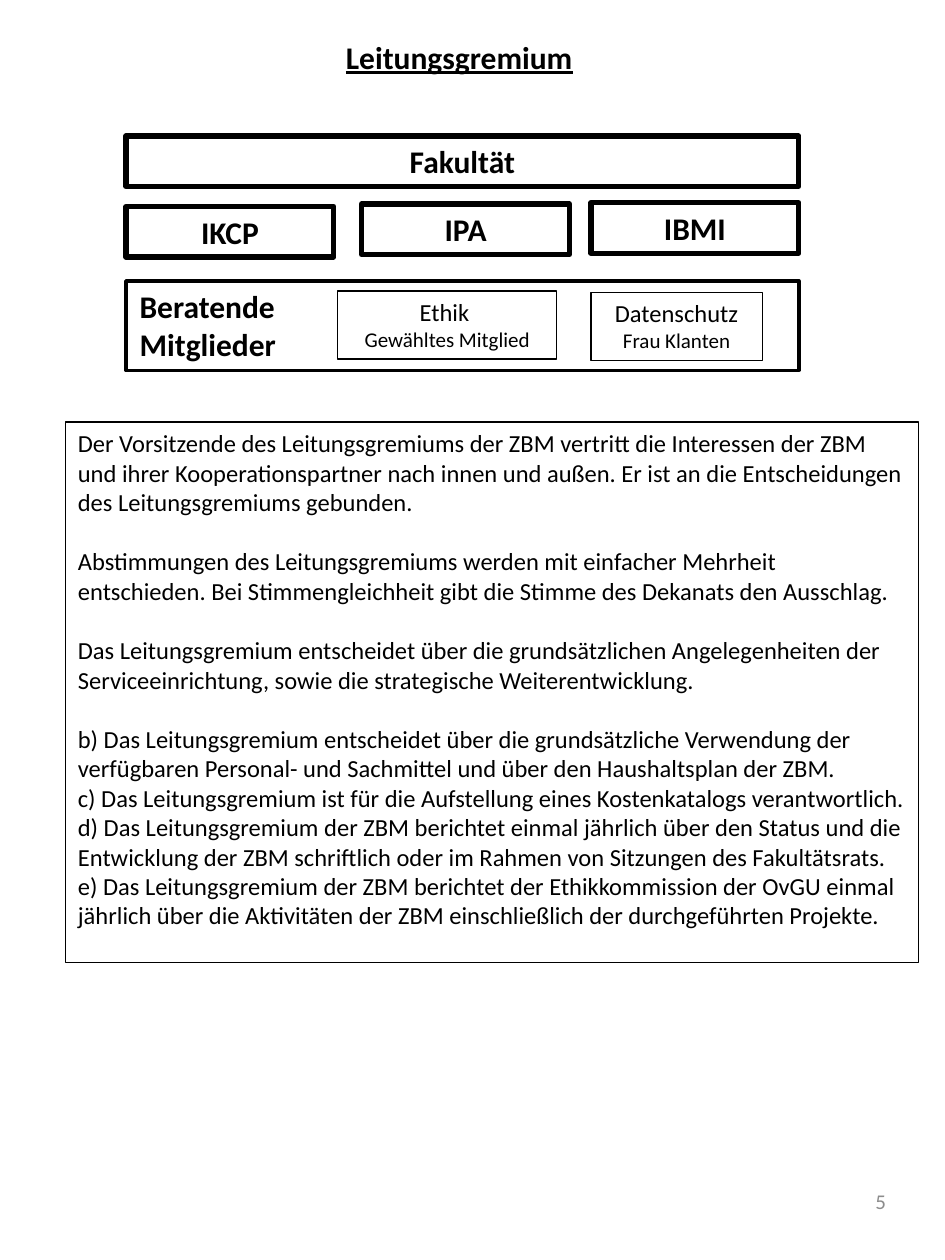
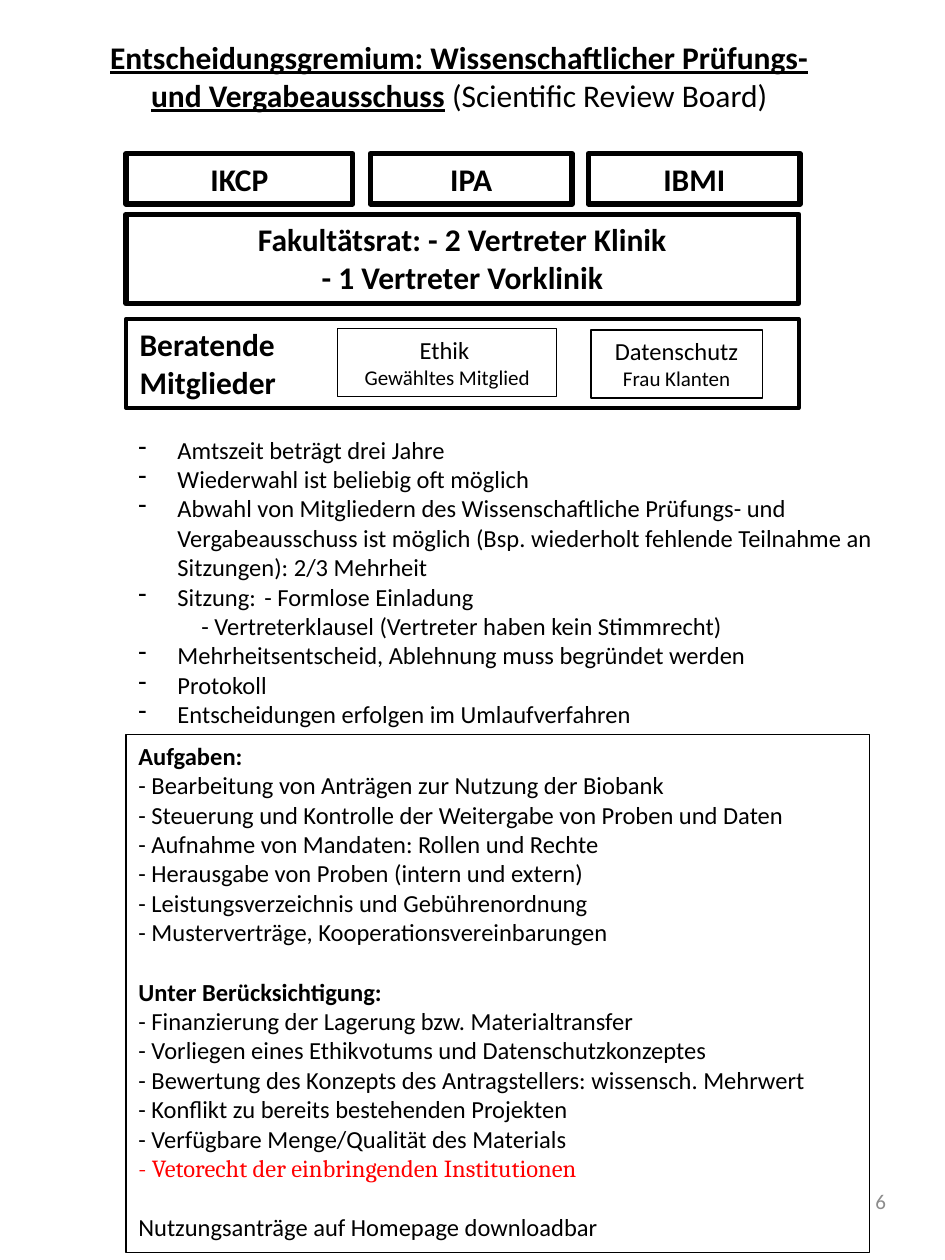
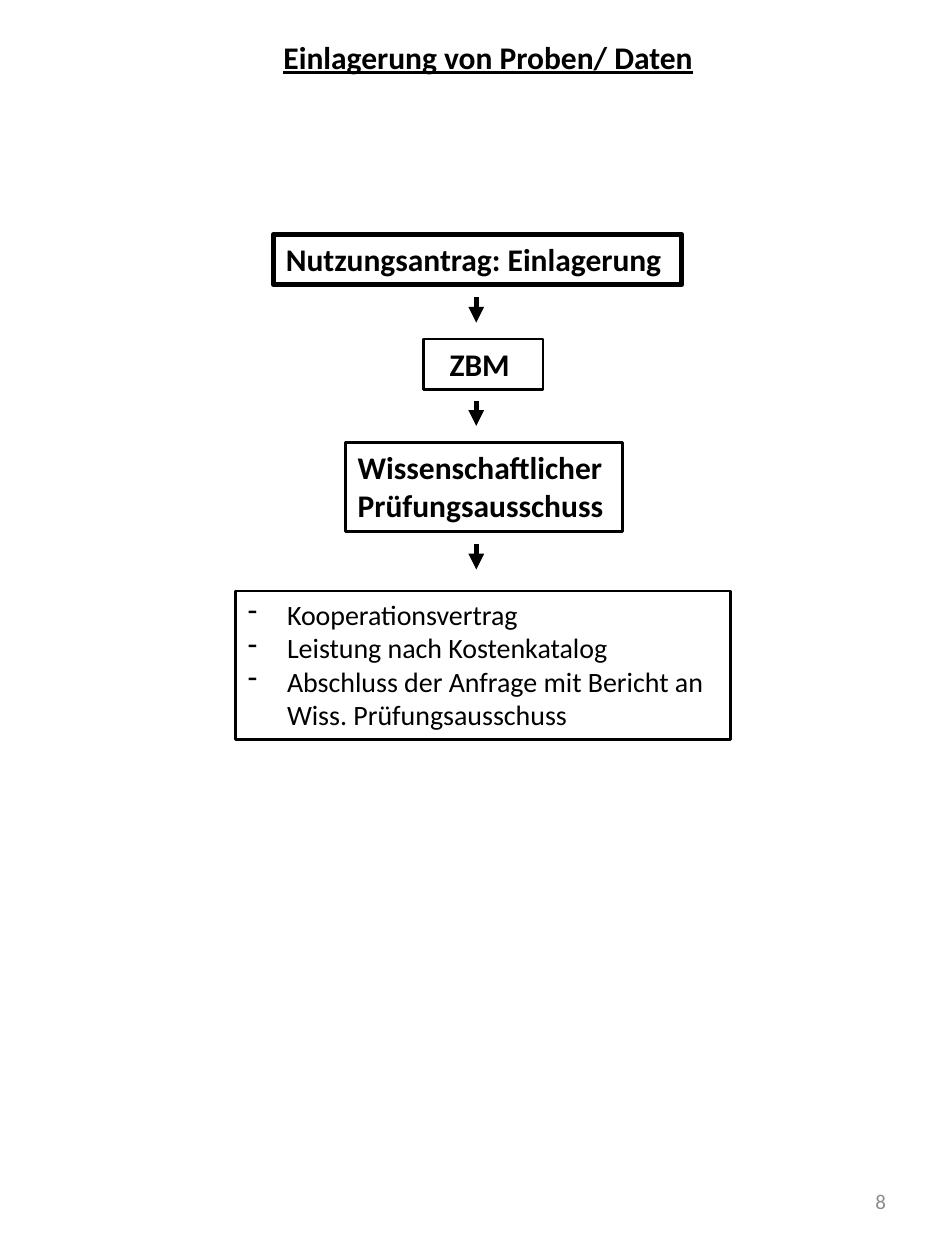
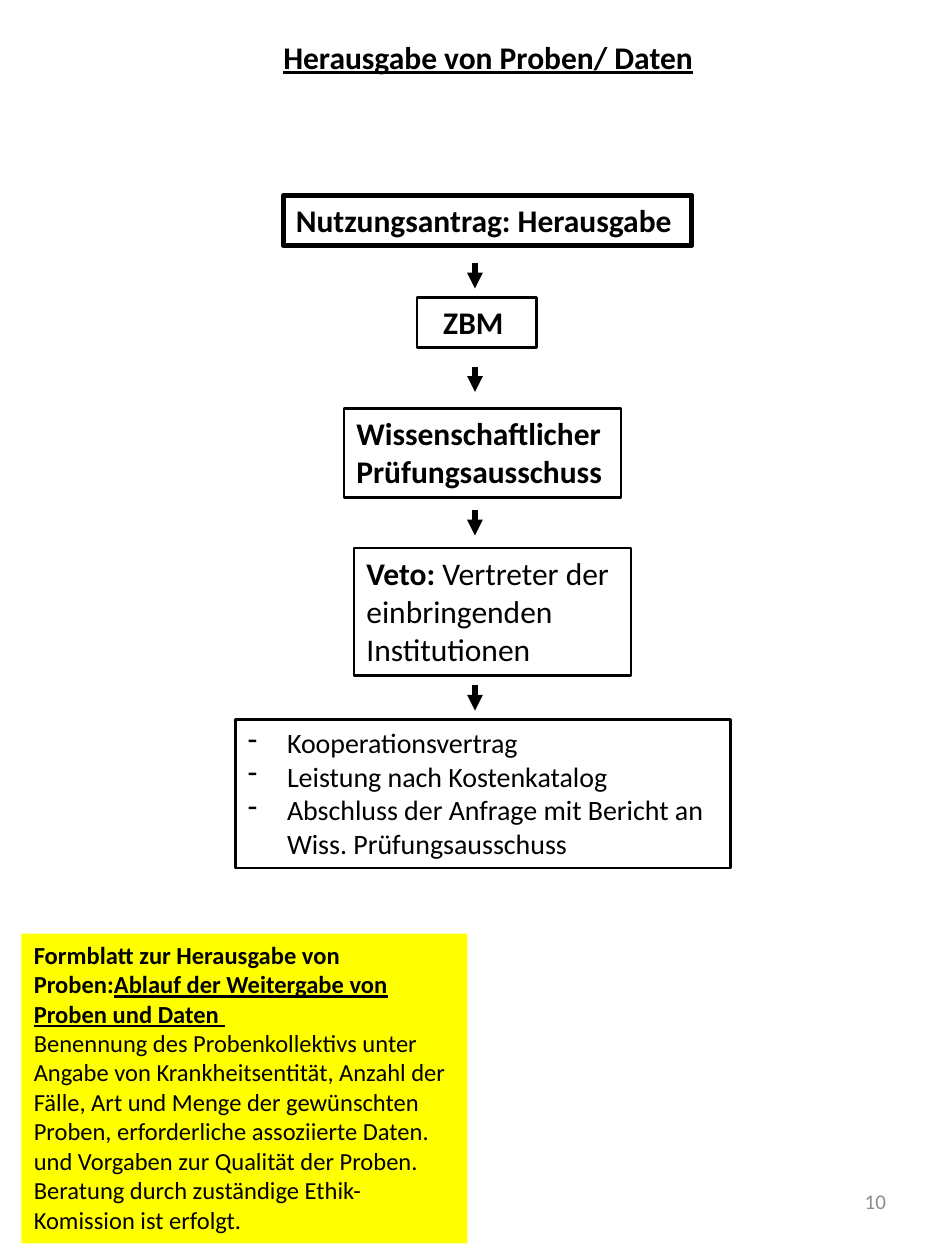
import pptx
import pptx.util
import pptx.dml.color
import pptx.enum.shapes
import pptx.enum.text
import pptx.oxml
import pptx.oxml.ns

Inches = pptx.util.Inches
Pt = pptx.util.Pt
RGBColor = pptx.dml.color.RGBColor
ALIGN = pptx.enum.text.PP_ALIGN
ANCHOR = pptx.enum.text.MSO_ANCHOR

BLACK = RGBColor(0x00, 0x00, 0x00)
RED = RGBColor(0xFF, 0x00, 0x00)
GREY = RGBColor(0x8C, 0x8C, 0x8C)
YELLOW = RGBColor(0xFF, 0xFF, 0x00)

THIN, MEDIUM, FRAME, THICK = 0.75, 1.5, 2, 3
BLANK_LINE = 17.1
HANGING = 0.31
ARROW_LENGTH = 0.2
ROW_HEIGHT, TWO_LINES = 0.4, 0.71
CHART_LEFT, CHART_WIDTH = 1, 5.34

BODY = {"size": Pt(14)}
BULLET = {"size": Pt(16)}
HEAD = {"size": Pt(18), "bold": True}
TITLE = {**HEAD, "underline": True}
PLAIN = {"bold": False, "underline": False}
SMALL = {"size": Pt(12)}
PAGE = {"size": Pt(12), "color": GREY}

GAP = {"before": BLANK_LINE}
DASH = {"bullet": True}

LEAD_DUTIES = [
    ("Der Vorsitzende des Leitungsgremiums der ZBM vertritt die Interessen der ZBM und ihrer "
     "Kooperationspartner nach innen und außen. Er ist an die Entscheidungen des "
     "Leitungsgremiums gebunden.", {}),
    ("Abstimmungen des Leitungsgremiums werden mit einfacher Mehrheit entschieden. Bei "
     "Stimmengleichheit gibt die Stimme des Dekanats den Ausschlag.", GAP),
    ("Das Leitungsgremium entscheidet über die grundsätzlichen Angelegenheiten der "
     "Serviceeinrichtung, sowie die strategische Weiterentwicklung.", GAP),
    ("b) Das Leitungsgremium entscheidet über die grundsätzliche Verwendung der verfügbaren "
     "Personal- und Sachmittel und über den Haushaltsplan der ZBM.", GAP),
    ("c) Das Leitungsgremium ist für die Aufstellung eines Kostenkatalogs verantwortlich.", {}),
    ("d) Das Leitungsgremium der ZBM berichtet einmal jährlich über den Status und die "
     "Entwicklung der ZBM schriftlich oder im Rahmen von Sitzungen des Fakultätsrats.", {}),
    ("e) Das Leitungsgremium der ZBM berichtet der Ethikkommission der OvGU einmal jährlich "
     "über die Aktivitäten der ZBM einschließlich der durchgeführten Projekte.", {}),
]
LEAD_INSTITUTES = [("IKCP", 1, 1.64, 1.65), ("IPA", 2.87, 1.62, 1.65), ("IBMI", 4.69, 1.61, 1.65)]
BOARD_INSTITUTES = [("IKCP", 1, 1.22, 1.8), ("IPA", 2.94, 1.22, 1.6), ("IBMI", 4.67, 1.22, 1.68)]
ADVISERS = [
    ("Datenschutz", "Frau Klanten", 4.69, 0.09, 1.36),
    ("Ethik ", "Gewähltes Mitglied", 2.68, 0.08, 1.74),
]
BOARD_TITLE = [
    ("Entscheidungsgremium: Wissenschaftlicher Prüfungs- und Vergabeausschuss", {}),
    (" (Scientific Review Board)", PLAIN),
]
BOARD_RULES = [
    ("Amtszeit beträgt drei Jahre", DASH),
    ("Wiederwahl ist beliebig oft möglich", DASH),
    ("Abwahl von Mitgliedern des Wissenschaftliche Prüfungs- und Vergabeausschuss ist möglich "
     "(Bsp. wiederholt fehlende Teilnahme an Sitzungen): 2/3 Mehrheit", DASH),
    ("Sitzung: \t- Formlose Einladung", DASH),
    ("\t- Vertreterklausel (Vertreter haben kein Stimmrecht)", {}),
    ("Mehrheitsentscheid, Ablehnung muss begründet werden", DASH),
    ("Protokoll", DASH),
    ("Entscheidungen erfolgen im Umlaufverfahren", DASH),
]
BOARD_TASKS = [
    ([("Aufgaben:", {"bold": True})], {}),
    ("- Bearbeitung von Anträgen zur Nutzung der Biobank", {}),
    ("- Steuerung und Kontrolle der Weitergabe von Proben und Daten", {}),
    ("- Aufnahme von Mandaten: Rollen und Rechte", {}),
    ("- Herausgabe von Proben (intern und extern)", {}),
    ("- Leistungsverzeichnis und Gebührenordnung", {}),
    ("- Musterverträge, Kooperationsvereinbarungen", {}),
    ([("Unter Berücksichtigung:", {"bold": True})], GAP),
    ("- Finanzierung der Lagerung bzw. Materialtransfer", {}),
    ("- Vorliegen eines Ethikvotums und Datenschutzkonzeptes", {}),
    ("- Bewertung des Konzepts des Antragstellers: wissensch. Mehrwert", {}),
    ("- Konflikt zu bereits bestehenden Projekten", {}),
    ("- Verfügbare Menge/Qualität des Materials", {}),
    ([("- Vetorecht der einbringenden Institutionen", {"name": "Cambria", "color": RED})],
     {"align": ALIGN.JUSTIFY}),
    ("Nutzungsanträge auf Homepage downloadbar", GAP),
]
COMMITTEE = [("Wissenschaftlicher", {}), ("Prüfungsausschuss", {})]
VETO = [([("Veto:", {}), (" Vertreter der einbringenden Institutionen", PLAIN)], {})]
CLOSING = [
    ("Kooperationsvertrag", DASH),
    ("Leistung nach Kostenkatalog", DASH),
    ("Abschluss der Anfrage mit Bericht an Wiss. Prüfungsausschuss", DASH),
]
ZBM = [("ZBM ", {"align": ALIGN.CENTER})]
FORM_NOTE = [
    ([("Formblatt zur Herausgabe von Proben:", {"bold": True}),
      ("Ablauf der Weitergabe von Proben und Daten ", {"bold": True, "underline": True})], {}),
    ("Benennung des Probenkollektivs unter Angabe von Krankheitsentität, Anzahl der Fälle, Art "
     "und Menge der gewünschten Proben, erforderliche assoziierte Daten. und Vorgaben zur "
     "Qualität der Proben. Beratung durch zuständige Ethik-Komission ist erfolgt.", {}),
]
FLOWS = [
    {
        "title": "Einlagerung von Proben/ Daten",
        "page": "8",
        "steps": [
            ([("Nutzungsantrag: Einlagerung", {})], (2.17, 1.86, 3.24, ROW_HEIGHT), THICK, HEAD),
            (ZBM, (3.36, 2.69, 0.95, ROW_HEIGHT), MEDIUM, HEAD),
            (COMMITTEE, (2.74, 3.51, 2.2, TWO_LINES), MEDIUM, HEAD),
            (CLOSING, (1.87, 4.69, 3.93, 1.18), MEDIUM, BULLET),
        ],
        "arrows": (3.78, [2.36, 3.18, 4.32]),
    },
    {
        "title": "Herausgabe von Proben/ Daten",
        "page": "10",
        "steps": [
            ([("Nutzungsantrag: Herausgabe", {})], (2.25, 1.55, 3.24, ROW_HEIGHT), THICK, HEAD),
            (ZBM, (3.31, 2.36, 0.95, ROW_HEIGHT), MEDIUM, HEAD),
            (COMMITTEE, (2.73, 3.24, 2.2, TWO_LINES), MEDIUM, HEAD),
            (VETO, (2.81, 4.35, 2.2, 1.01), MEDIUM, HEAD),
            (CLOSING, (1.87, 5.71, 3.93, 1.18), MEDIUM, BULLET),
        ],
        "arrows": (3.77, [2.09, 2.91, 4.05, 5.44]),
    },
]


def style_run(r, fmt):
    fmt = {"name": "Calibri", "color": BLACK, **fmt}
    r.font.color.rgb = fmt.pop("color")
    for key, value in fmt.items():
        setattr(r.font, key, value)


def add_dash(p):
    pPr = p._p.get_or_add_pPr()
    pPr.set("marL", str(Inches(HANGING)))
    pPr.set("indent", str(-Inches(HANGING)))
    bullet = pptx.oxml.parse_xml('<a:buChar %s char="-"/>' % pptx.oxml.ns.nsdecls("a"))
    pPr.append(bullet)


def write(sp, paragraphs, base, align=ALIGN.LEFT, anchor=ANCHOR.TOP):
    tf = sp.text_frame
    tf.word_wrap = True
    tf.vertical_anchor = anchor
    for i, (runs, layout) in enumerate(paragraphs):
        p = tf.add_paragraph() if i else tf.paragraphs[0]
        p.alignment = layout.get("align", align)
        if "before" in layout:
            p.space_before = Pt(layout["before"])
        if layout.get("bullet"):
            add_dash(p)
        for text, fmt in [(runs, {})] if isinstance(runs, str) else runs:
            r = p.add_run()
            r.text = text
            style_run(r, {**base, **fmt})


def add_text(shapes, at, paragraphs, base, **layout):
    sp = shapes.add_textbox(*map(Inches, at))
    write(sp, paragraphs, base, **layout)


def add_box(shapes, at, paragraphs, base, line=None, fill=None, **layout):
    sp = shapes.add_shape(pptx.enum.shapes.MSO_SHAPE.RECTANGLE, *map(Inches, at))
    sp.shadow.inherit = False
    if fill is None:
        sp.fill.background()
    else:
        sp.fill.solid()
        sp.fill.fore_color.rgb = fill
    if line is None:
        sp.line.fill.background()
    else:
        sp.line.color.rgb = BLACK
        sp.line.width = Pt(line)
    write(sp, paragraphs, base, **layout)


def add_arrow(shapes, x, top):
    c = shapes.add_connector(pptx.enum.shapes.MSO_CONNECTOR.STRAIGHT, Inches(x), Inches(top),
                             Inches(x), Inches(top + ARROW_LENGTH))
    c.line.color.rgb = BLACK
    c.line.width = Pt(THICK)
    ns = pptx.oxml.ns.nsdecls("a")
    c.line._get_or_add_ln().append(pptx.oxml.parse_xml('<a:tailEnd %s type="triangle"/>' % ns))
    c._element.spPr.append(pptx.oxml.parse_xml("<a:effectLst %s/>" % ns))


def add_institutes(shapes, institutes):
    for name, left, top, width in institutes:
        add_box(shapes, (left, top, width, ROW_HEIGHT), [(name, {})], HEAD, THICK,
                align=ALIGN.CENTER)


def add_advisers(slide, top):
    shapes = slide.shapes.add_group_shape().shapes
    for role, person, left, offset, width in ADVISERS:
        lines = [(role, {}), ([(person, SMALL)], {})]
        add_box(shapes, (left, top + offset, width, 0.54), lines, BODY, THIN, align=ALIGN.CENTER)
    add_box(shapes, (CHART_LEFT, top, CHART_WIDTH, TWO_LINES), [], HEAD, FRAME)
    add_text(shapes, (1.01, top, 1.32, TWO_LINES), [("Beratende Mitglieder", {})], HEAD)


def new_slide(prs, title, page, left=0.6, width=6.09, height=ROW_HEIGHT):
    s = prs.slides.add_slide(prs.slide_layouts[6])
    add_text(s.shapes, (left, 0.25, width, height), [(title, {})], TITLE, align=ALIGN.CENTER)
    add_text(s.shapes, (5.38, 9.27, 1.75, 0.53), [(page, {})], PAGE, align=ALIGN.RIGHT,
             anchor=ANCHOR.MIDDLE)
    return s


def build_lead(prs):
    s = new_slide(prs, "Leitungsgremium", "5")
    add_box(s.shapes, (0.52, 3.35, 6.77, 4.29), LEAD_DUTIES, BODY, THIN)
    add_advisers(s, 2.23)
    add_box(s.shapes, (CHART_LEFT, 1.08, CHART_WIDTH, ROW_HEIGHT), [("Fakultät", {})], HEAD,
            THICK, align=ALIGN.CENTER)
    add_institutes(s.shapes, LEAD_INSTITUTES)


def build_board(prs):
    s = new_slide(prs, BOARD_TITLE, "6", height=TWO_LINES)
    add_box(s.shapes, (1, 5.83, 5.9, 4.11), BOARD_TASKS, BODY, THIN)
    add_institutes(s.shapes, BOARD_INSTITUTES)
    council = [("Fakultätsrat: - 2 Vertreter Klinik", {}), ("- 1 Vertreter Vorklinik", {})]
    add_box(s.shapes, (CHART_LEFT, 1.7, CHART_WIDTH, TWO_LINES), council, HEAD, THICK,
            align=ALIGN.CENTER)
    add_text(s.shapes, (1, 3.4, 6.05, 2.46), BOARD_RULES, BODY)
    add_advisers(s, 2.53)


def build_flow(prs, flow):
    s = new_slide(prs, flow["title"], flow["page"], left=0.92, width=5.91)
    for paragraphs, at, line, base in flow["steps"]:
        add_box(s.shapes, at, paragraphs, base, line)
    x, tops = flow["arrows"]
    for top in tops:
        add_arrow(s.shapes, x, top)
    return s


def main():
    prs = pptx.Presentation()
    prs.slide_width, prs.slide_height = Inches(7.5), Inches(10)
    build_lead(prs)
    build_board(prs)
    for flow in FLOWS:
        s = build_flow(prs, flow)
    add_box(s.shapes, (0.17, 7.41, 3.54, 2.46), FORM_NOTE, BODY, fill=YELLOW)
    prs.save("out.pptx")


if __name__ == "__main__":
    main()
